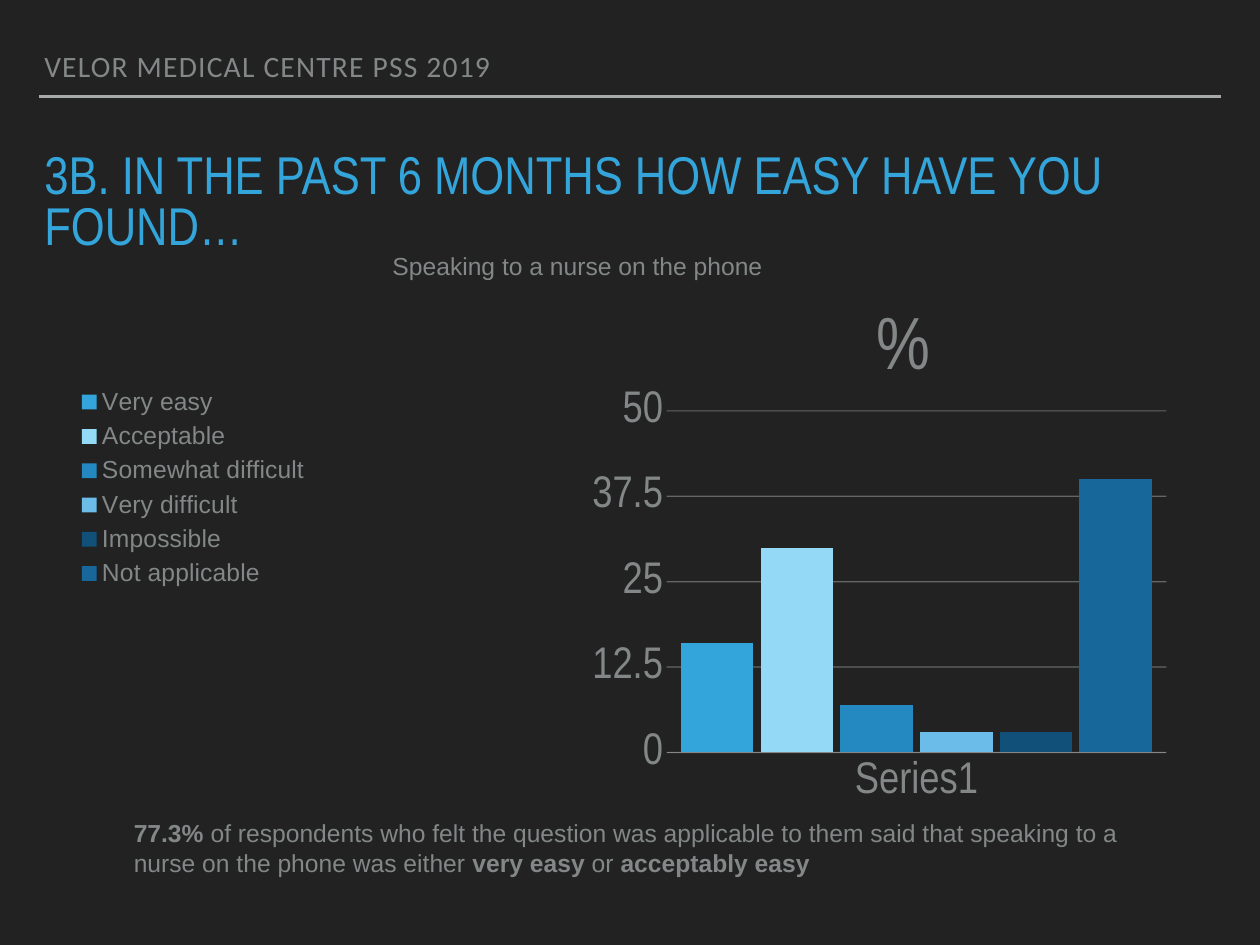
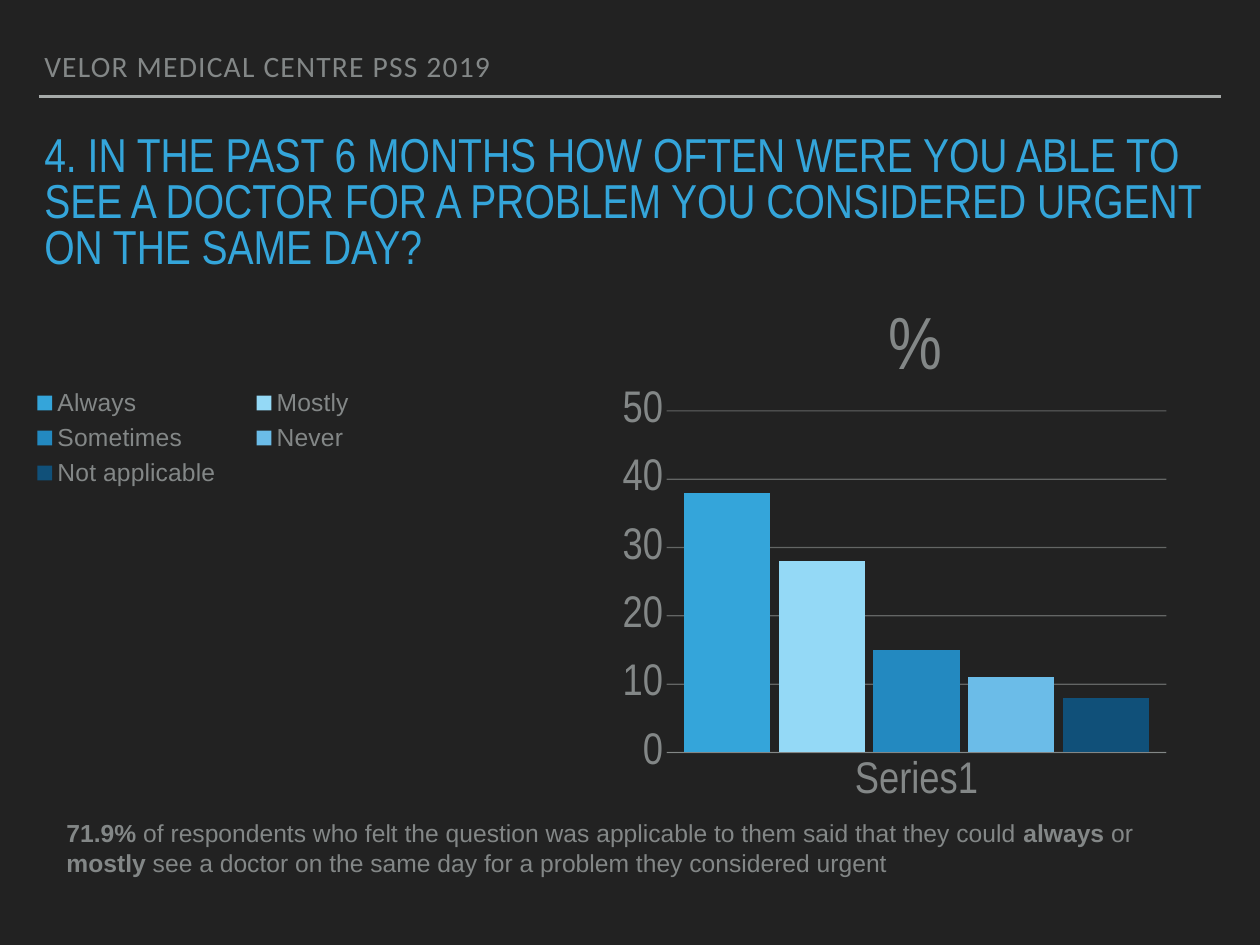
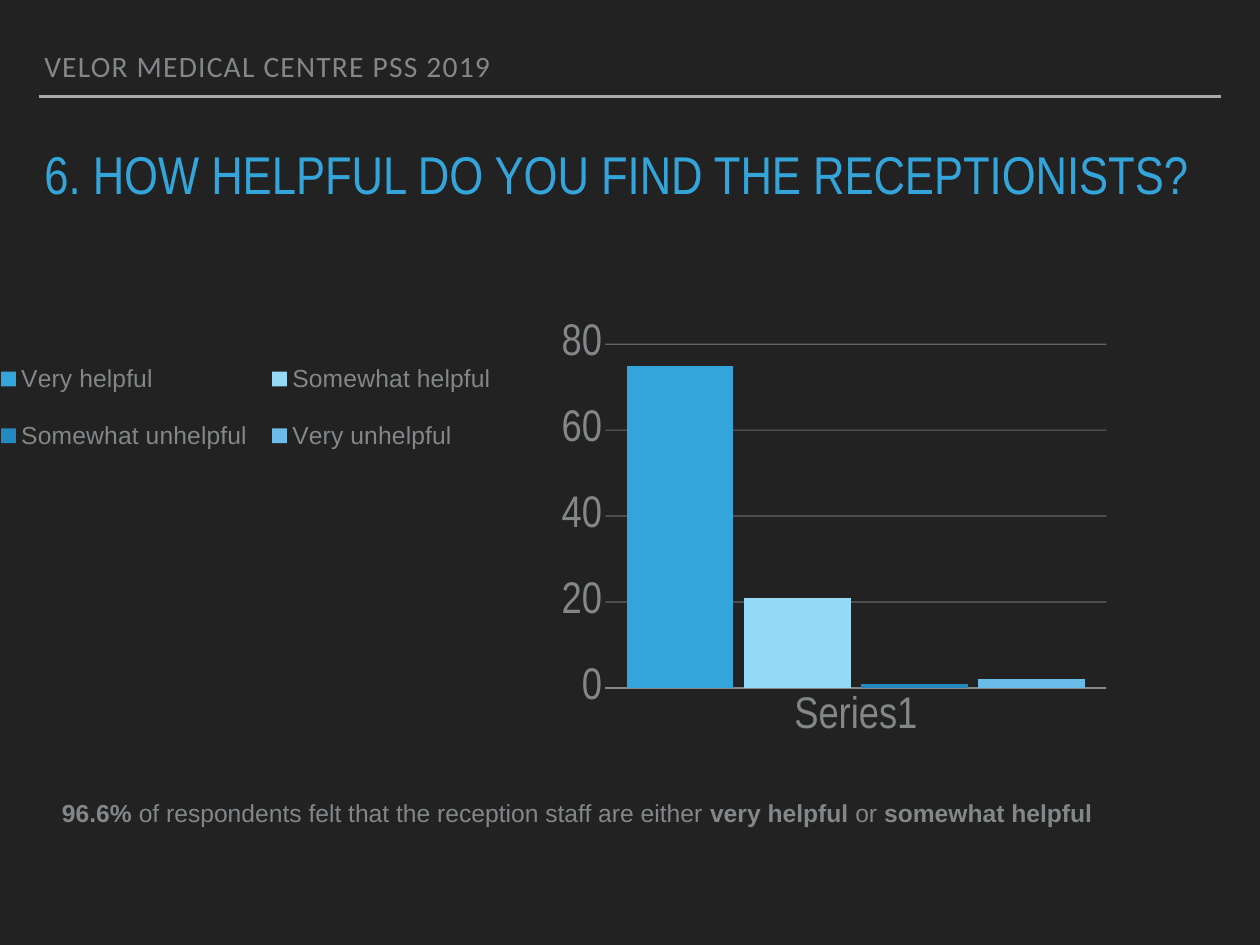
from pptx import Presentation
from pptx.chart.data import CategoryChartData
from pptx.dml.color import RGBColor
from pptx.enum.chart import XL_CHART_TYPE, XL_LEGEND_POSITION, XL_TICK_LABEL_POSITION, XL_TICK_MARK
from pptx.enum.shapes import MSO_CONNECTOR
from pptx.enum.text import MSO_ANCHOR, MSO_AUTO_SIZE
from pptx.oxml import parse_xml
from pptx.oxml.ns import nsdecls
from pptx.util import Inches, Pt

# Shared style
BACKGROUND = RGBColor(0x22, 0x22, 0x22)
GREY = RGBColor(0x83, 0x87, 0x87)
RULE = RGBColor(0xA6, 0xAA, 0xA9)
BLUE = RGBColor(0x34, 0xA5, 0xDA)
SERIES_COLOURS = [
    BLUE,
    RGBColor(0x94, 0xD9, 0xF6),
    RGBColor(0x23, 0x89, 0xC0),
    RGBColor(0x6B, 0xBC, 0xE8),
    RGBColor(0x10, 0x50, 0x79),
    RGBColor(0x18, 0x67, 0x9A),
]
BODY_FONT = "Arial"
NARROW_FONT = "Arial Narrow"
HEADER_FONT = "Calibri"
HEADER = "VELOR MEDICAL CENTRE PSS 2019"

# Chart frames and inner plot areas (plot as fractions of the frame)
TALL_FRAME = (0.05, 3.31, 13.18, 5.99)
TALL_PLOT = (0.567, 0.222, 0.428, 0.644)
LOW_FRAME = (-0.18, 3.39, 12.73, 5.17)
LOW_PLOT = (0.551, 0.096, 0.444, 0.751)


def style_font(font, size, name=BODY_FONT, colour=GREY, bold=False):
    font.size = Pt(size)
    font.name = name
    font.bold = bold
    font.color.rgb = colour


def add_text(slide, text, box, size=20, name=BODY_FONT, colour=GREY, anchor=MSO_ANCHOR.MIDDLE,
             wrap=True, grow=False, line_spacing=None, space_before=0, tracking=0):
    """Add a text box; parts between ** marks are bold."""
    shape = slide.shapes.add_textbox(*map(Inches, box))
    frame = shape.text_frame
    frame.word_wrap = wrap
    frame.vertical_anchor = anchor
    frame.auto_size = MSO_AUTO_SIZE.SHAPE_TO_FIT_TEXT if grow else MSO_AUTO_SIZE.NONE
    frame.margin_left = frame.margin_right = Inches(0.06)
    frame.margin_top = frame.margin_bottom = Inches(0.06)
    paragraph = frame.paragraphs[0]
    paragraph.space_before = Pt(space_before)
    if line_spacing:
        paragraph.line_spacing = line_spacing
    for index, part in enumerate(text.split("**")):
        if part:
            run = paragraph.add_run()
            run.text = part
            style_font(run.font, size, name, colour, bold=index % 2 == 1)
    if tracking:
        for properties in shape.element.xpath(".//a:rPr"):
            properties.set("spc", str(tracking * 100))
    return shape


def add_rule(slide):
    line = slide.shapes.add_connector(
        MSO_CONNECTOR.STRAIGHT, Inches(0.44), Inches(1.09), Inches(13.78), Inches(1.09))
    line.line.color.rgb = RULE
    line.line.width = Pt(2)
    line.element.spPr.append(parse_xml(f"<a:effectLst {nsdecls('a')}/>"))


def add_question_slide(presentation, title, title_box=(0.44, 1.68, 13.33, 0.79),
                       size=43.2, space_before=22):
    slide = presentation.slides.add_slide(presentation.slide_layouts[6])
    add_rule(slide)
    add_text(slide, HEADER, (0.44, 0.5, 12.22, 0.5), size=24, name=HEADER_FONT,
             anchor=MSO_ANCHOR.BOTTOM, line_spacing=0.8, tracking=1)
    add_text(slide, title, title_box, size=size, name=NARROW_FONT, colour=BLUE,
             anchor=MSO_ANCHOR.TOP, line_spacing=0.8, space_before=space_before)
    return slide


def add_note(slide, text, box):
    add_text(slide, text, box, grow=True, space_before=24)


def set_layout(parent, position, values, inner=False):
    """Place a chart part by fractions of the chart frame."""
    for layout in parent.xpath("c:layout"):
        parent.remove(layout)
    target = '<c:layoutTarget val="inner"/>' if inner else ""
    names = ("x", "y", "w", "h")[:len(values)]
    modes = "".join(f'<c:{name}Mode val="edge"/>' for name in ("x", "y"))
    sizes = "".join(f'<c:{name} val="{value}"/>' for name, value in zip(names, values))
    parent.insert(position, parse_xml(
        f"<c:layout {nsdecls('c')}><c:manualLayout>{target}{modes}{sizes}"
        "</c:manualLayout></c:layout>"))


def style_axes(chart, maximum, step):
    category_axis, value_axis = chart.category_axis, chart.value_axis
    for axis in (category_axis, value_axis):
        axis.major_tick_mark = axis.minor_tick_mark = XL_TICK_MARK.NONE
        style_font(axis.tick_labels.font, 36, NARROW_FONT)
    category_axis.tick_label_position = XL_TICK_LABEL_POSITION.LOW
    category_axis.format.line.color.rgb = GREY
    category_axis.format.line.width = Pt(1)
    value_axis.minimum_scale = 0
    value_axis.maximum_scale = maximum
    value_axis.major_unit = step
    value_axis.format.line.fill.background()
    grid = value_axis.major_gridlines.format.line
    grid.color.rgb = RULE
    grid.width = Pt(1)
    for colour in chart.element.xpath(".//c:majorGridlines//a:srgbClr"):
        colour.append(parse_xml(f'<a:alpha {nsdecls("a")} val="50000"/>'))


def add_percent_chart(slide, answers, maximum, step, legend_box,
                      frame=TALL_FRAME, plot_box=TALL_PLOT, title_at=None):
    data = CategoryChartData()
    data.categories = ["Series1"]
    for name, value in answers.items():
        data.add_series(name, [value])
    chart = slide.shapes.add_chart(
        XL_CHART_TYPE.COLUMN_CLUSTERED, *map(Inches, frame), data).chart
    style_font(chart.font, 10, "Roboto", BACKGROUND)

    # Columns
    plot = chart.plots[0]
    plot.gap_width = 40
    plot.overlap = -10
    plot.vary_by_categories = False
    for series, colour in zip(plot.series, SERIES_COLOURS):
        series.format.fill.solid()
        series.format.fill.fore_color.rgb = colour
    style_axes(chart, maximum, step)
    set_layout(chart.element.xpath(".//c:plotArea")[0], 0, plot_box, inner=True)

    # Legend
    chart.has_legend = True
    chart.legend.position = XL_LEGEND_POSITION.LEFT
    chart.legend.include_in_layout = True
    style_font(chart.legend.font, 20)
    set_layout(chart.element.xpath(".//c:legend")[0], 1, legend_box)

    # Title
    chart.has_title = title_at is not None
    if title_at:
        paragraph = chart.chart_title.text_frame.paragraphs[0]
        run = paragraph.add_run()
        run.text = "%"
        style_font(run.font, 60, NARROW_FONT)
        title = chart.element.xpath("c:chart/c:title")[0]
        set_layout(title, 1, title_at)
        for overlay in title.xpath("c:overlay"):
            overlay.set("val", "1")


def main():
    presentation = Presentation()
    presentation.slide_width = Inches(14.22)
    presentation.slide_height = Inches(10.67)
    background = presentation.slide_master.background.fill
    background.solid()
    background.fore_color.rgb = BACKGROUND

    # Nurse on the phone
    slide = add_question_slide(
        presentation, "3B. IN THE PAST 6 MONTHS HOW EASY HAVE YOU FOUND…")
    add_percent_chart(
        slide,
        {"Very easy": 16, "Acceptable": 30, "Somewhat difficult": 7,
         "Very difficult": 3, "Impossible": 3, "Not applicable": 40},
        maximum=50, step=12.5, legend_box=(0, 0.167, 0.323, 0.4), title_at=(0.735, 0.002))
    add_text(slide, "Speaking to a nurse on the phone", (4.37, 2.75, 4.43, 0.49),
             wrap=False, grow=True, space_before=24)
    add_note(slide, "**77.3% **of respondents who felt the question was applicable to them said "
             "that speaking to a nurse on the phone was either **very easy** or "
             "**acceptably easy**", (1.45, 9.14, 11.85, 0.86))

    # Urgent appointments
    slide = add_question_slide(
        presentation, "4. IN THE PAST 6 MONTHS HOW OFTEN WERE YOU ABLE TO SEE A DOCTOR "
        "FOR A PROBLEM YOU CONSIDERED URGENT ON THE SAME DAY?",
        title_box=(0.44, 1.48, 13.35, 1.35), size=38.7, space_before=15)
    add_percent_chart(
        slide,
        {"Always": 38, "Mostly": 28, "Sometimes": 15, "Never": 11, "Not applicable": 8},
        maximum=50, step=10, legend_box=(0, 0.167, 0.323, 0.212), title_at=(0.746, 0.002))
    add_note(slide, "**71.9%** of respondents who felt the question was applicable to them said "
             "that they could **always** or **mostly** see a doctor on the same day for a "
             "problem they considered urgent", (0.69, 9.14, 12.64, 0.86))

    # Receptionists
    slide = add_question_slide(
        presentation, "6. HOW HELPFUL DO YOU FIND THE RECEPTIONISTS?")
    add_percent_chart(
        slide,
        {"Very helpful": 75, "Somewhat helpful": 21,
         "Somewhat unhelpful": 1, "Very unhelpful": 2},
        maximum=80, step=20, legend_box=(0, 0.078, 0.464, 0.312),
        frame=LOW_FRAME, plot_box=LOW_PLOT)
    add_note(slide, "**96.6%** of respondents felt that the reception staff are either "
             "**very helpful** or **somewhat helpful**", (0.64, 8.93, 12.64, 0.49))

    presentation.save("out.pptx")


if __name__ == "__main__":
    main()
